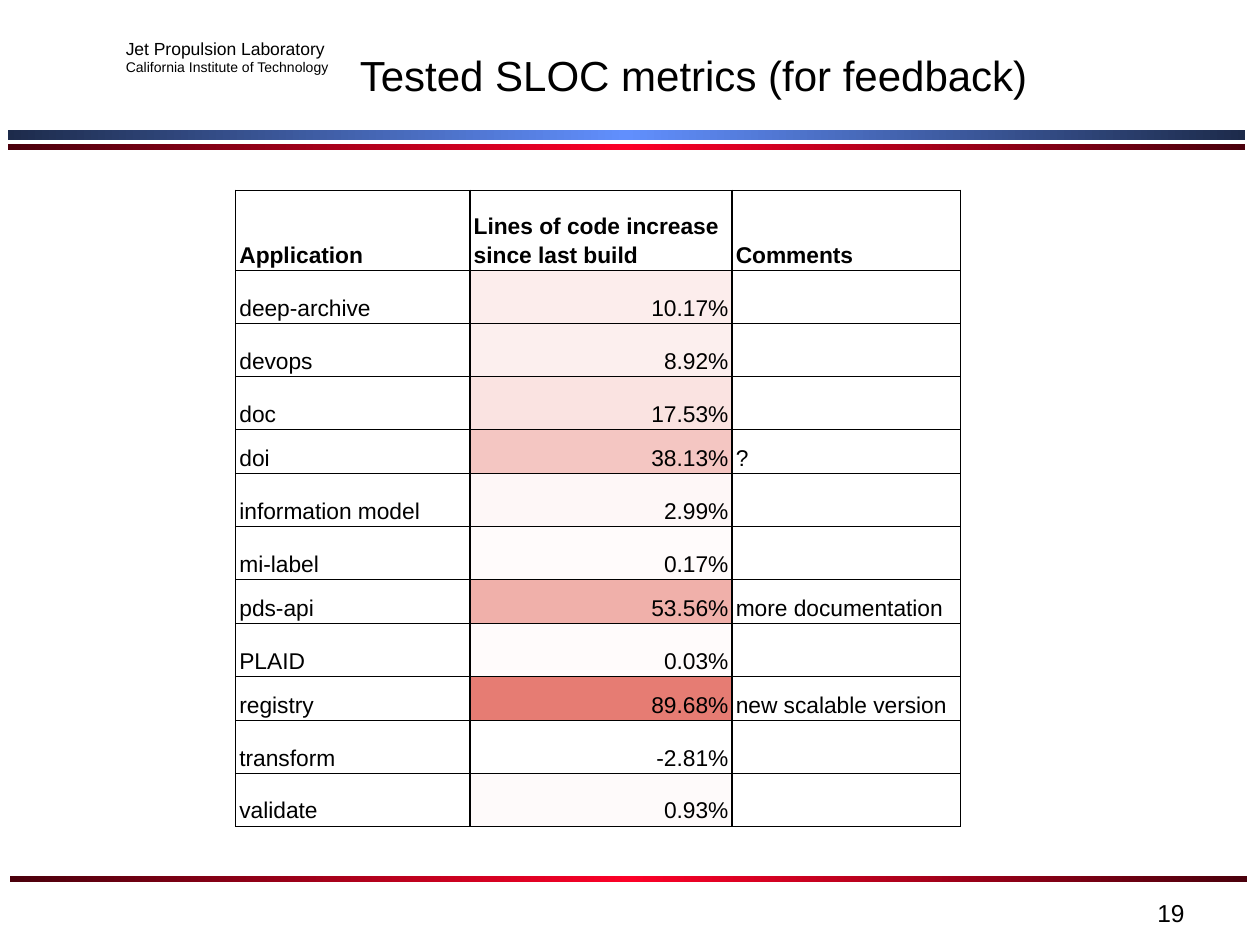
import copy
import math
from dataclasses import dataclass

import pptx
import pptx.util
from pptx.dml.color import RGBColor
from pptx.enum.shapes import MSO_SHAPE
from pptx.enum.text import MSO_ANCHOR, MSO_AUTO_SIZE, PP_ALIGN
from pptx.oxml import parse_xml
from pptx.oxml.ns import nsdecls, qn
from pptx.util import Inches, Pt


@dataclass(frozen=True)
class Theme:
    font: str = "Arial"
    text: str = "000000"
    blue_edge: str = "1D2B4B"
    blue_middle: str = "618FFD"
    red_edge: str = "4B000C"
    red_middle: str = "FC0128"
    heat_low: str = "FFFFFF"
    heat_high: str = "E67C73"
    title_size: float = 24
    number_size: float = 14
    table_size: float = 13
    lab_size: float = 10
    institute_size: float = 8
    border_width: float = 0.75


THEME = Theme()

HEADINGS = ["Application", "Lines of code increase\nsince last build", "Comments"]
METRICS = [
    ("deep-archive", 10.17, ""),
    ("devops", 8.92, ""),
    ("doc", 17.53, ""),
    ("doi", 38.13, "?"),
    ("information model", 2.99, ""),
    ("mi-label", 0.17, ""),
    ("pds-api", 53.56, "more documentation"),
    ("PLAID", 0.03, ""),
    ("registry", 89.68, "new scalable version"),
    ("transform", -2.81, ""),
    ("validate", 0.93, ""),
]
COLUMN_WIDTHS = [1.86, 2.08, 1.81]
HEADING_HEIGHT, EMPTY_COMMENT_HEIGHT, COMMENT_HEIGHT = 0.64, 0.42, 0.35


def write_text(frame, text, sizes, align=PP_ALIGN.LEFT, bold=False, spacing=1.0):
    """Fill a frame, one paragraph per line; sizes is one size or one per line."""
    frame.text = text
    if not isinstance(sizes, list):
        sizes = [sizes] * len(frame.paragraphs)
    for paragraph, size in zip(frame.paragraphs, sizes):
        paragraph.alignment = align
        paragraph.line_spacing = spacing
        paragraph.font.name = THEME.font
        paragraph.font.size = Pt(size)
        paragraph.font.bold = bold
        paragraph.font.color.rgb = RGBColor.from_string(THEME.text)


def add_label(slide, left, top, width, height, text, sizes, **style):
    label = slide.shapes.add_textbox(
        Inches(left), Inches(top), Inches(width), Inches(height))
    label.text_frame.word_wrap = True
    write_text(label.text_frame, text, sizes, **style)


def add_title(slide, text):
    title = slide.shapes.title
    title.left, title.top = Inches(2.67), Inches(0.3)
    title.width, title.height = Inches(5.67), Inches(0.7)
    frame = title.text_frame
    frame.auto_size = MSO_AUTO_SIZE.NONE
    frame.vertical_anchor = MSO_ANCHOR.TOP
    frame.margin_top = Inches(0.09)
    write_text(frame, text, THEME.title_size, align=PP_ALIGN.CENTER)


def add_rule(slide, left, top, height, edge, middle):
    """Draw a full-width bar that is bright in the middle and dark at both ends."""
    rule = slide.shapes.add_shape(
        MSO_SHAPE.RECTANGLE, Inches(left), Inches(top), Inches(9.82), Inches(height))
    rule.shadow.inherit = False
    rule.line.fill.background()
    rule.fill.gradient()
    rule.fill.gradient_angle = 0
    stops = rule.element.spPr.find(".//" + qn("a:gsLst"))
    stops.append(copy.deepcopy(stops[-1]))
    for stop, position, color in zip(
            rule.fill.gradient_stops, (0, 0.5, 1), (edge, middle, edge)):
        stop.position = position
        stop.color.rgb = RGBColor.from_string(color)


def heat_color(value):
    """Blend the two heat colours by the value's place in the column's range."""
    values = [increase for _, increase, _ in METRICS]
    share = (value - min(values)) / (max(values) - min(values))
    low = RGBColor.from_string(THEME.heat_low)
    high = RGBColor.from_string(THEME.heat_high)
    return RGBColor(*(math.ceil(a + (b - a) * share) for a, b in zip(low, high)))


def set_borders(cell):
    properties = cell._tc.get_or_add_tcPr()
    for index, side in enumerate(("lnL", "lnR", "lnT", "lnB")):
        properties.insert(index, parse_xml(
            f'<a:{side} {nsdecls("a")} w="{Pt(THEME.border_width)}">'
            f'<a:solidFill><a:srgbClr val="{THEME.text}"/></a:solidFill></a:{side}>'))


def fill_cell(cell, text, fill=None, **style):
    cell.vertical_anchor = MSO_ANCHOR.BOTTOM
    cell.margin_left = cell.margin_right = Inches(0.03)
    cell.margin_top = cell.margin_bottom = Inches(0.02)
    write_text(cell.text_frame, text, THEME.table_size, spacing=1.15, **style)
    if fill is None:
        cell.fill.background()
    else:
        cell.fill.solid()
        cell.fill.fore_color.rgb = fill
    set_borders(cell)


def add_metrics_table(slide):
    heights = [HEADING_HEIGHT] + [
        COMMENT_HEIGHT if comment else EMPTY_COMMENT_HEIGHT
        for _, _, comment in METRICS]
    table = slide.shapes.add_table(
        len(heights), len(COLUMN_WIDTHS), Inches(1.87), Inches(1.51),
        Inches(sum(COLUMN_WIDTHS)), Inches(sum(heights))).table
    table.first_row = table.horz_banding = False
    for column, width in zip(table.columns, COLUMN_WIDTHS):
        column.width = Inches(width)
    for row, height in zip(table.rows, heights):
        row.height = Inches(height)

    for index, heading in enumerate(HEADINGS):
        fill_cell(table.cell(0, index), heading, bold=True)
    for index, (application, increase, comment) in enumerate(METRICS, start=1):
        fill_cell(table.cell(index, 0), application)
        fill_cell(table.cell(index, 1), f"{increase:.2f}%",
                  fill=heat_color(increase), align=PP_ALIGN.RIGHT)
        fill_cell(table.cell(index, 2), comment)


def main():
    deck = pptx.Presentation()
    deck.slide_width, deck.slide_height = Inches(10), Inches(7.5)
    slide = deck.slides.add_slide(deck.slide_layouts.get_by_name("Title Only"))

    add_rule(slide, 0.06, 1.03, 0.08, THEME.blue_edge, THEME.blue_middle)
    for left, top in ((0.06, 1.14), (0.08, 6.95)):
        add_rule(slide, left, top, 0.05, THEME.red_edge, THEME.red_middle)
    add_label(slide, 0.9, 0.25, 1.85, 0.4,
              "Jet Propulsion Laboratory\nCalifornia Institute of Technology",
              [THEME.lab_size, THEME.institute_size])
    add_title(slide, "Tested SLOC metrics (for feedback)")
    add_label(slide, 7.17, 7.08, 2.33, 0.27, "19", THEME.number_size,
              align=PP_ALIGN.RIGHT)
    add_metrics_table(slide)

    deck.save("out.pptx")


if __name__ == "__main__":
    main()
